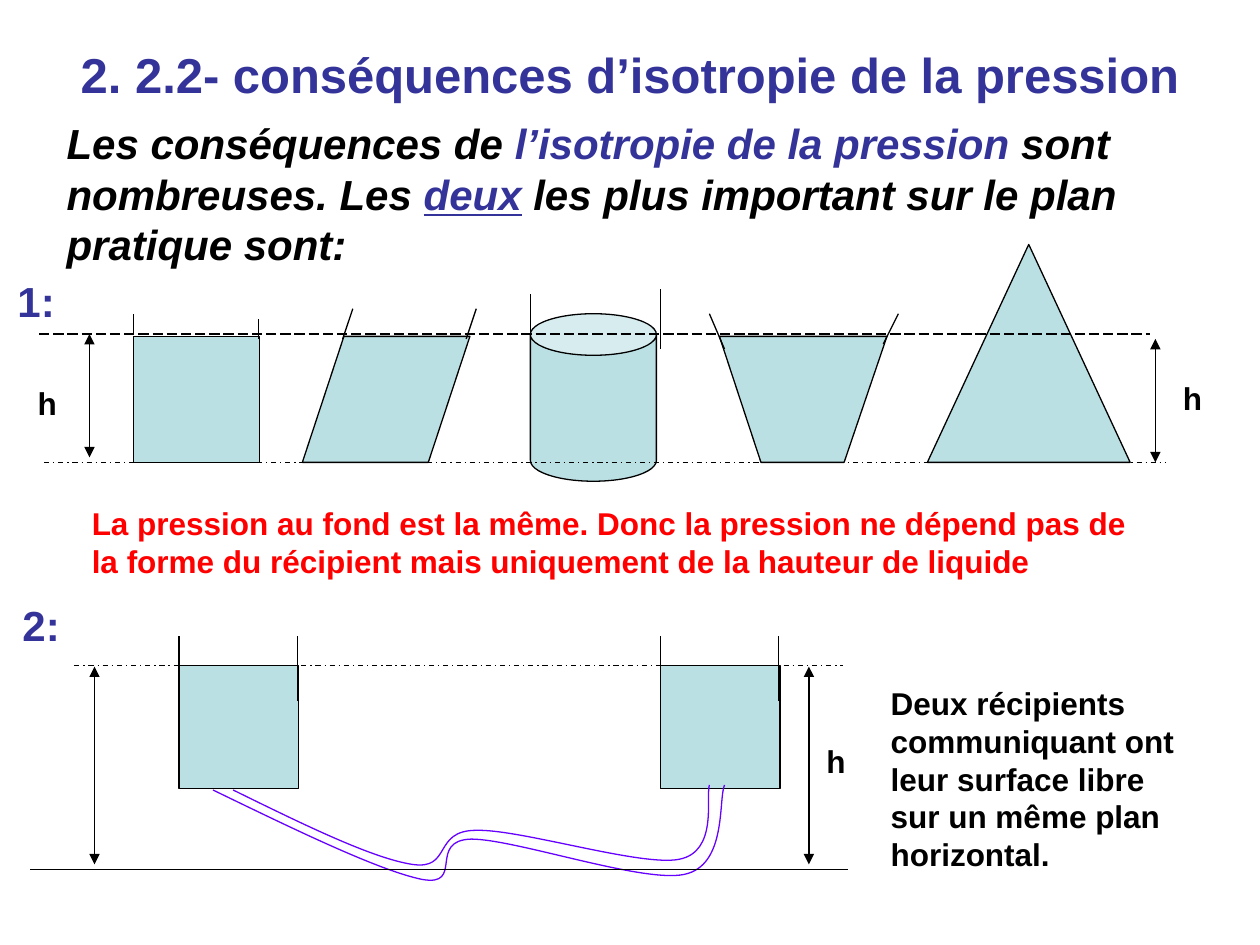
from pptx import Presentation
from pptx.dml.color import RGBColor
from pptx.enum.dml import MSO_LINE
from pptx.enum.shapes import MSO_CONNECTOR, MSO_SHAPE
from pptx.enum.text import MSO_ANCHOR, PP_ALIGN
from pptx.oxml.xmlchemy import OxmlElement
from pptx.util import Inches, Pt

STRAIGHT = MSO_CONNECTOR.STRAIGHT
RECT, SLANT = MSO_SHAPE.RECTANGLE, MSO_SHAPE.PARALLELOGRAM
CAN, CONE = MSO_SHAPE.CAN, MSO_SHAPE.ISOSCELES_TRIANGLE
DOT, DASH = MSO_LINE.DASH_DOT, MSO_LINE.LONG_DASH
TOP, MIDDLE = MSO_ANCHOR.TOP, MSO_ANCHOR.MIDDLE
LEFT, CENTER = PP_ALIGN.LEFT, PP_ALIGN.CENTER

COLS, ROWS = 1000, 750
CELL = Inches(0.01)
THIN = Pt(0.75)
HEX = {"black": "000000", "navy": "333399", "red": "FF0000",
       "water": "BBE0E3", "tube": "6600FF"}
RGB = {name: RGBColor.from_string(code) for name, code in HEX.items()}

deck = Presentation()
deck.slide_width, deck.slide_height = COLS * CELL, ROWS * CELL
slide = deck.slides.add_slide(deck.slide_layouts[6])
shapes = slide.shapes


def write(runs, box, size=18, color="black", italic=False, align=LEFT, anchor=TOP):
    frame = shapes.add_textbox(*[n * CELL for n in box]).text_frame
    frame.word_wrap = True
    frame.vertical_anchor = anchor
    para = frame.paragraphs[0]
    para.alignment = align
    for words, tint, under in [(runs, color, False)] if isinstance(runs, str) else runs:
        run = para.add_run()
        run.text = words
        font = run.font
        font.name, font.size, font.bold = "Arial", Pt(size), True
        font.italic, font.underline = italic, under
        font.color.rgb = RGB[tint]


def draw(x1, y1, x2, y2, dash=None, arrows=False):
    rule = shapes.add_connector(STRAIGHT, *[n * CELL for n in (x1, y1, x2, y2)])
    rule.line.color.rgb = RGB["black"]
    rule.line.width = THIN
    if dash:
        rule.line.dash_style = dash
    props = rule.element.spPr
    if arrows:
        for tag in ("a:headEnd", "a:tailEnd"):
            tip = OxmlElement(tag)
            tip.set("type", "triangle")
            props.find(rule.line._ln.tag).append(tip)
    props.append(OxmlElement("a:effectLst"))


write("2. 2.2- conséquences d’isotropie de la pression", (50, 17, 900, 83),
      size=28, color="navy", align=CENTER, anchor=MIDDLE)
write([("Les conséquences de ", "black", False),
       ("l’isotropie de la pression", "navy", False),
       (" sont nombreuses. Les ", "black", False),
       ("deux", "navy", True),
       (" les plus important sur le plan pratique sont:", "black", False)],
      (43, 91, 898, 125), size=24, italic=True, anchor=MIDDLE)

BASE, LEVEL = 367, 267
tanks = [
    (RECT, (106, LEVEL, 100, 100), None),
    (SLANT, (240, LEVEL, 133, 100), 0.33),
    (CAN, (421, 249, 100, 133), 0.33),
    (CONE, (736, 194, 161, 173), 0.5),
    (RECT, (142, 528, 95, 98), None),
    (RECT, (524, 528, 95, 98), None),
]
forms = []
for kind, box, bend in tanks:
    tank = shapes.add_shape(kind, *[n * CELL for n in box])
    if bend:
        tank.adjustments[0] = bend
    forms.append(tank)

vat = shapes.build_freeform(571, LEVEL, scale=CELL)
vat.add_line_segments([(604, BASE), (670, BASE), (704, LEVEL)])
forms.append(vat.convert_to_shape())
for form in forms:
    form.shadow.inherit = False
    form.fill.solid()
    form.fill.fore_color.rgb = RGB["water"]
    form.line.color.rgb = RGB["black"]
    form.line.width = THIN

walls = [
    (106, 265, 106, 249), (205, 269, 205, 253),
    (272, 269, 280, 245), (370, 269, 378, 245),
    (421, 273, 421, 233), (524, 277, 524, 229),
    (575, 277, 563, 249), (701, 273, 713, 249),
]
walls += [(x, 556, x, 505) for x in (142, 236, 524, 618)]
for wall in walls:
    draw(*wall)

draw(35, BASE, 925, BASE, dash=DOT)
draw(31, 265, 913, 265, dash=DASH)
draw(59, 528, 669, 528, dash=DOT)

tubes = [
    [(185, 627), (240, 654), (295, 681), (327, 686), (359, 691), (343, 659),
     (378, 659), (413, 658), (509, 688), (539, 682), (570, 676), (560, 633),
     (563, 623)],
    [(169, 627), (235, 659), (301, 691), (335, 698), (369, 704), (339, 667),
     (374, 666), (409, 666), (510, 701), (543, 694), (577, 687), (570, 635),
     (575, 623)],
]
for knots in tubes:
    trace = shapes.build_freeform(*knots[0], scale=CELL)
    trace.add_line_segments(knots[1:], close=False)
    tube = trace.convert_to_shape()
    tube.shadow.inherit = False
    tube.fill.background()
    tube.line.color.rgb = RGB["tube"]
    tube.line.width = THIN
    legs = tube.element.xpath(".//a:lnTo")
    for i in range(0, len(legs), 3):
        curve = OxmlElement("a:cubicBezTo")
        legs[i].addprevious(curve)
        for leg in legs[i:i + 3]:
            curve.append(leg[0])
            leg.getparent().remove(leg)

draw(24, 690, 673, 690)
for x, top, end in [(71, 265, 363), (917, 269, 367), (75, 529, 686), (642, 529, 686)]:
    draw(x, top, x, end, arrows=True)

for x, y in [(20, 300), (929, 296), (646, 584)]:
    write("h", (x, y, 35, 40))
for mark, x, y in [("1:", 4, 214), ("2:", 8, 471)]:
    write(mark, (x, y, 51, 50), size=24, color="navy")
write("La pression au fond est la même. Donc la pression ne dépend pas de "
      "la forme du récipient mais uniquement de la hauteur de liquide",
      (63, 395, 862, 70), color="red")
write("Deux récipients communiquant ont leur surface libre "
      "sur un même plan horizontal.", (697, 538, 252, 160))

deck.save("out.pptx")
